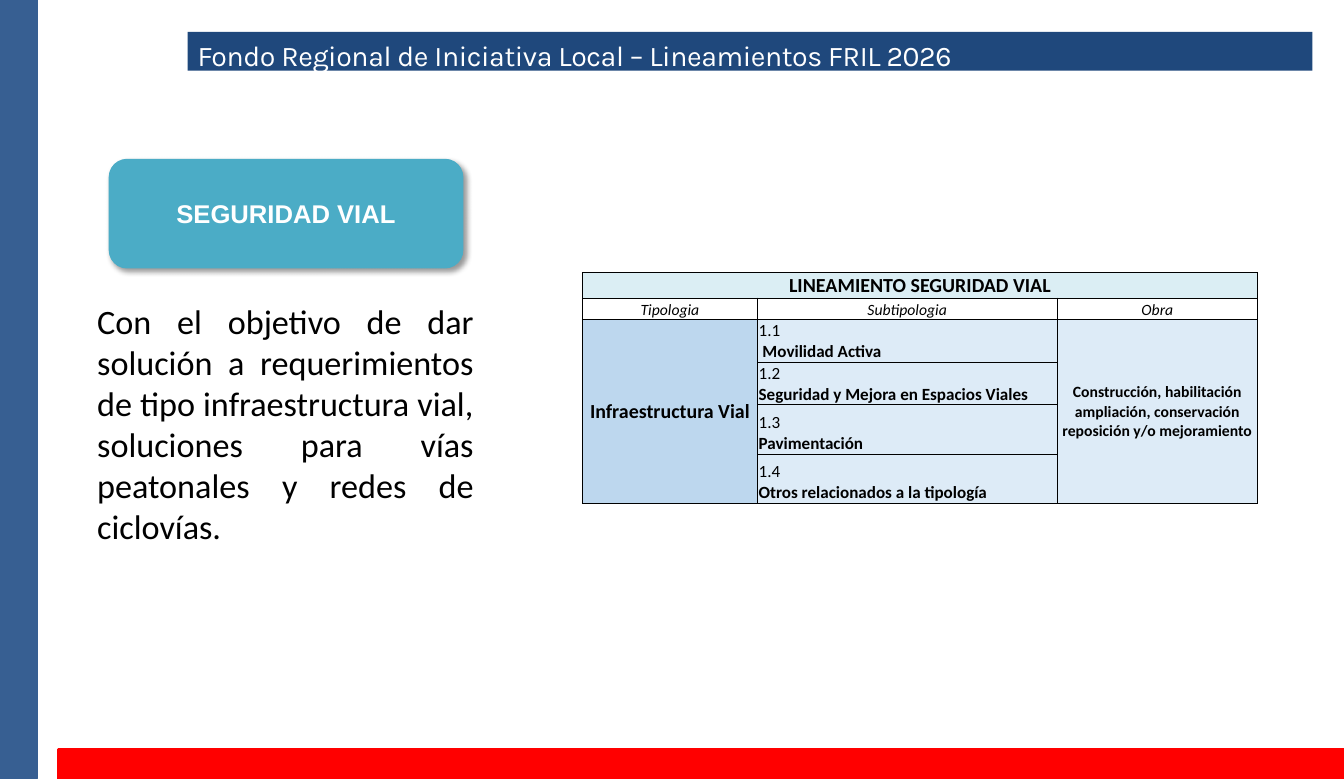
from lxml.etree import SubElement
from pptx import Presentation
from pptx.dml.color import RGBColor as RGB
from pptx.enum.shapes import MSO_SHAPE as SHAPE
from pptx.enum.text import MSO_ANCHOR as ANCHOR, PP_ALIGN as ALIGN
from pptx.oxml.ns import qn
from pptx.util import Inches, Pt

BLACK = RGB(0x00, 0x00, 0x00)
WHITE = RGB(0xFF, 0xFF, 0xFF)
SIDE_BLUE = RGB(0x37, 0x5F, 0x92)
TITLE_BLUE = RGB(0x1F, 0x48, 0x7C)
RED = RGB(0xFF, 0x00, 0x00)
TEAL = RGB(0x4B, 0xAC, 0xC6)
HEADER_FILL = RGB(0xDB, 0xEE, 0xF4)
TYPE_FILL = RGB(0xBD, 0xD7, 0xEE)
BODY_FILL = RGB(0xDD, 0xEB, 0xF7)

SUBTYPES = [
    ("1.1", " Movilidad Activa"),
    ("1.2", "Seguridad y Mejora en Espacios Viales"),
    ("1.3", "Pavimentación"),
    ("1.4", "Otros relacionados a la tipología"),
]
COLUMNS = [13.04, 22.27, 14.95]
ROWS = [3.16, 2.76, 5.39, 5.39, 6.32, 6.32]
COLUMN_EDGES = [1, 0.5, 0.5, 1]
ROW_EDGES = [1, 0.5, 1, 0.5, 0.5, 0.5, 1]


class Deck:
    """Draws styled elements on one slide, with lengths in percent of its size."""

    def __init__(self, prs):
        self.width, self.height = prs.slide_width, prs.slide_height
        self.shapes = prs.slides.add_slide(prs.slide_layouts[6]).shapes

    def x(self, share):
        return round(self.width * share / 100)

    def y(self, share):
        return round(self.height * share / 100)

    def box(self, left, top, width, height):
        return self.x(left), self.y(top), self.x(width), self.y(height)

    def run(self, p, text, size, color=BLACK, font="Calibri", bold=False, italic=False):
        r = p.add_run()
        r.text = text
        f = r.font
        f.name, f.size, f.bold, f.italic = font, Pt(size), bold, italic
        f.color.rgb = color
        return r

    def block(self, kind, fill, *place, outline=False):
        sp = self.shapes.add_shape(kind, *self.box(*place))
        sp.shadow.inherit = False
        sp.fill.solid()
        sp.fill.fore_color.rgb = fill
        if outline:
            sp.line.color.rgb = fill
            sp.line.width = Pt(2)
        else:
            sp.line.fill.background()
        return sp

    def title(self, text, *place):
        tf = self.block(SHAPE.RECTANGLE, TITLE_BLUE, *place).text_frame
        tf.word_wrap = True
        tf.vertical_anchor = ANCHOR.TOP
        tf.margin_left, tf.margin_top = Inches(0.1), Inches(0.06)
        tf.margin_right = tf.margin_bottom = 0
        p = tf.paragraphs[0]
        p.alignment = ALIGN.LEFT
        r = self.run(p, text, 20, WHITE, "Karla")
        r.font._element.set("spc", "-30")

    def badge(self, text, *place):
        sp = self.block(SHAPE.ROUNDED_RECTANGLE, TEAL, *place)
        effects = sp._element.spPr.find(qn("a:effectLst"))
        shadow = SubElement(effects, qn("a:outerShdw"), blurRad=str(Pt(4)),
                            dist=str(Pt(3)), dir="2700000", algn="tl", rotWithShape="0")
        color = SubElement(shadow, qn("a:srgbClr"), val=str(BLACK))
        SubElement(color, qn("a:alpha"), val="40000")
        tf = sp.text_frame
        tf.word_wrap = True
        tf.vertical_anchor = ANCHOR.MIDDLE
        p = tf.paragraphs[0]
        p.alignment = ALIGN.CENTER
        self.run(p, text, 18, WHITE, "Arial", bold=True)

    def paragraph(self, text, *place):
        tf = self.shapes.add_textbox(*self.box(*place)).text_frame
        tf.word_wrap = True
        p = tf.paragraphs[0]
        p.alignment = ALIGN.JUSTIFY
        self.run(p, text, 24)

    def table(self, left, top, columns, rows):
        place = self.box(left, top, sum(columns), sum(rows))
        tbl = self.shapes.add_table(len(rows), len(columns), *place).table
        tbl.first_row = tbl.horz_banding = False
        for column, share in zip(tbl.columns, columns):
            column.width = self.x(share)
        for row, share in zip(tbl.rows, rows):
            row.height = self.y(share)
        return tbl

    def borders(self, tbl):
        for i in range(len(tbl.rows)):
            for j in range(len(tbl.columns)):
                cell = tbl.cell(i, j)
                right, bottom = j + cell.span_width, i + cell.span_height
                if cell.is_spanned:
                    right, bottom = j + 1, i + 1
                edges = {"a:lnL": COLUMN_EDGES[j], "a:lnR": COLUMN_EDGES[right],
                         "a:lnT": ROW_EDGES[i], "a:lnB": ROW_EDGES[bottom]}
                tc_pr = cell._tc.get_or_add_tcPr()
                for tag, width in edges.items():
                    ln = SubElement(tc_pr, qn(tag), w=str(Pt(width)))
                    solid = SubElement(ln, qn("a:solidFill"))
                    SubElement(solid, qn("a:srgbClr"), val=str(BLACK))
                cell.fill.background()

    def cell(self, cell, lines, fill=None, anchor=ANCHOR.BOTTOM, align=ALIGN.CENTER):
        cell.margin_left = cell.margin_right = cell.margin_top = Inches(0.01)
        cell.margin_bottom = 0
        cell.vertical_anchor = anchor
        if fill is not None:
            cell.fill.solid()
            cell.fill.fore_color.rgb = fill
        tf = cell.text_frame
        for n, (text, size, bold, italic) in enumerate(lines):
            p = tf.add_paragraph() if n else tf.paragraphs[0]
            p.alignment = align
            self.run(p, text, size, bold=bold, italic=italic)


def main():
    prs = Presentation()
    prs.slide_width, prs.slide_height = Inches(13.11), Inches(7.6)
    s = Deck(prs)

    s.block(SHAPE.RECTANGLE, SIDE_BLUE, 0, 0, 2.75, 100, outline=True)
    s.block(SHAPE.RECTANGLE, RED, 4.35, 96.18, 95.65, 3.82, outline=True)
    s.title("Fondo Regional de Iniciativa Local – Lineamientos FRIL 2026",
            13.96, 4.08, 83.68, 5)
    s.badge("SEGURIDAD VIAL", 8.09, 20.39, 26.39, 14.08)

    tbl = s.table(43.33, 35, COLUMNS, ROWS)
    tbl.cell(0, 0).merge(tbl.cell(0, 2))
    for j in (0, 2):
        tbl.cell(2, j).merge(tbl.cell(5, j))
    s.borders(tbl)
    s.cell(tbl.cell(0, 0), [("LINEAMIENTO SEGURIDAD VIAL", 14, True, False)], HEADER_FILL)
    for j, heading in enumerate(["Tipologia", "Subtipologia", "Obra"]):
        s.cell(tbl.cell(1, j), [(heading, 11, False, True)])
    s.cell(tbl.cell(2, 0), [("Infraestructura Vial", 14, True, False)],
           TYPE_FILL, ANCHOR.MIDDLE)
    works = "Construcción, habilitación ampliación, conservación reposición y/o mejoramiento"
    s.cell(tbl.cell(2, 2), [(works, 11, True, False)], BODY_FILL, ANCHOR.MIDDLE)
    for i, (number, name) in enumerate(SUBTYPES, start=2):
        s.cell(tbl.cell(i, 1), [(number, 12, False, False), (name, 12, True, False)],
               BODY_FILL, align=ALIGN.LEFT)

    s.paragraph("Con el objetivo de dar solución a requerimientos de tipo infraestructura "
                "vial, soluciones para vías peatonales y redes de ciclovías.",
                6.48, 37.89, 29.52, 26.45)
    prs.save("out.pptx")


if __name__ == "__main__":
    main()
